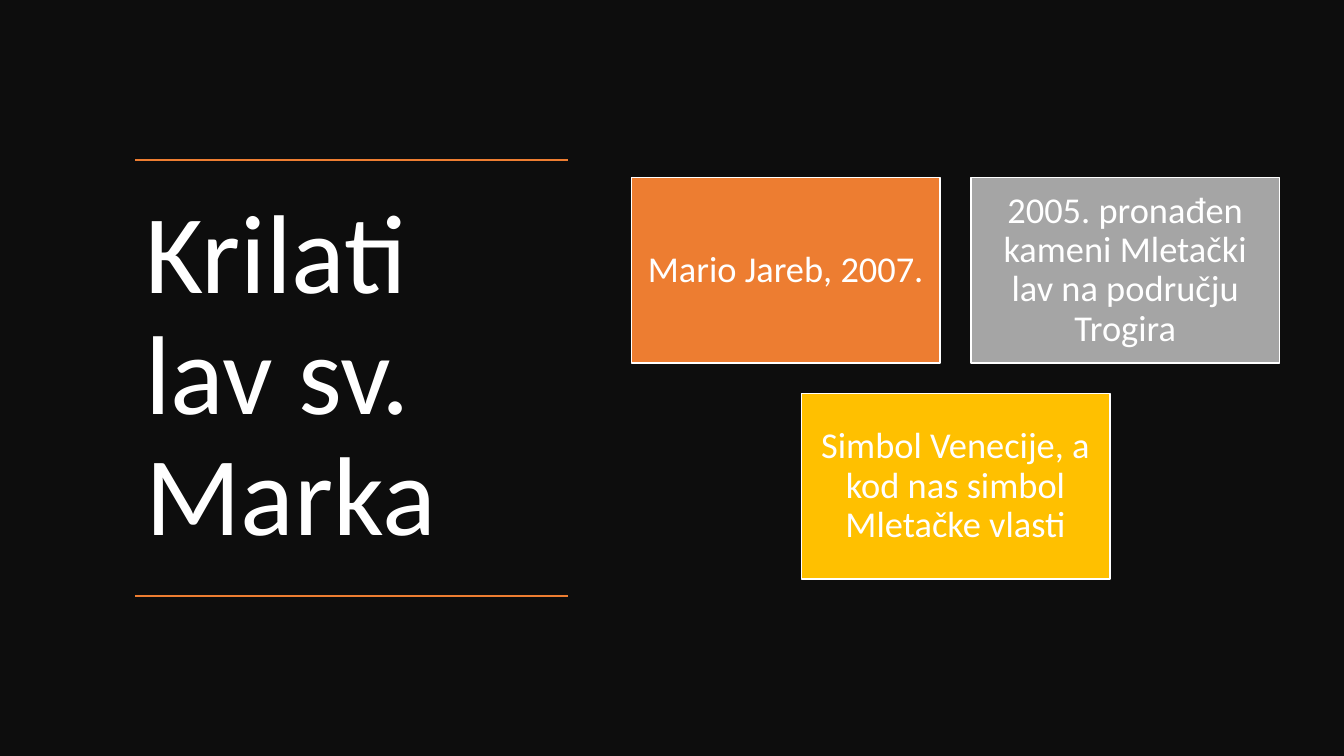
from lxml.etree import SubElement
from pptx import Presentation
from pptx.dml.color import RGBColor
from pptx.enum.shapes import MSO_CONNECTOR as Connector, MSO_SHAPE as Preset
from pptx.enum.text import MSO_ANCHOR as Anchor, MSO_AUTO_SIZE as AutoSize, PP_ALIGN as Align
from pptx.oxml.ns import qn
from pptx.util import Pt

COLORS = {
    "backdrop": "0D0D0D",
    "text": "FFFFFF",
    "orange": "ED7D31",
    "gray": "A5A5A5",
    "gold": "FFC000",
}
WIDTH, HEIGHT = 960, 540


class SlideBuilder:
    """Holds the style and the current slide."""

    font_name = "Calibri"

    def __init__(self, presentation):
        self.slide = presentation.slides.add_slide(presentation.slide_layouts[5])

    def color(self, name):
        return RGBColor.from_string(COLORS[name])

    def set_text(self, shape, text, size, align):
        frame = shape.text_frame
        frame.word_wrap = True
        frame.auto_size = AutoSize.NONE
        frame.vertical_anchor = Anchor.MIDDLE
        frame.text = text
        paragraph = frame.paragraphs[0]
        paragraph.alignment = align
        paragraph.line_spacing = 0.9
        paragraph.font.name = self.font_name
        paragraph.font.size = Pt(size)
        paragraph.font.color.rgb = self.color("text")
        return frame

    def title(self, text, left, top, width, height):
        shape = self.slide.shapes.title
        shape.left, shape.top = Pt(left), Pt(top)
        shape.width, shape.height = Pt(width), Pt(height)
        frame = self.set_text(shape, text, 80, Align.LEFT)
        frame.margin_right = Pt(36)

    def rectangle(self, left, top, width, height, fill):
        shape = self.slide.shapes.add_shape(
            Preset.RECTANGLE, Pt(left), Pt(top), Pt(width), Pt(height))
        shape.shadow.inherit = False
        shape.fill.solid()
        shape.fill.fore_color.rgb = self.color(fill)
        return shape

    def backdrop(self):
        shape = self.rectangle(0, 0, WIDTH, HEIGHT, "backdrop")
        shape.line.fill.background()
        self.slide.shapes.title.element.addprevious(shape.element)

    def rule(self, left, right, y):
        line = self.slide.shapes.add_connector(
            Connector.STRAIGHT, Pt(left), Pt(y), Pt(right), Pt(y))
        line.line.color.rgb = self.color("orange")
        line.line.width = Pt(1)
        SubElement(line.element.spPr, qn("a:effectLst"))

    def card(self, text, left, top, width, height, fill):
        shape = self.rectangle(left, top, width, height, fill)
        shape.line.color.rgb = self.color("text")
        shape.line.width = Pt(1)
        frame = self.set_text(shape, text, 26, Align.CENTER)
        frame.margin_left = frame.margin_right = Pt(7.8)
        frame.margin_top = frame.margin_bottom = Pt(7.8)


def main():
    presentation = Presentation()
    presentation.slide_width, presentation.slide_height = Pt(WIDTH), Pt(HEIGHT)
    builder = SlideBuilder(presentation)
    builder.backdrop()

    # Title between two rules
    left, top, width, height = 96.5, 114.2, 309.5, 311.6
    builder.title("Krilati lav sv. Marka", left, top, width, height)
    for y in (top, top + height):
        builder.rule(left, left + width, y)

    # Cards: two above, one centred below
    card_left, card_top = 451.2, 126.9
    card_width, card_height, gap = 220.4, 132.3, 22
    cards = [
        ("Mario Jareb, 2007.", 0, 0, "orange"),
        ("2005. pronađen kameni Mletački lav na području Trogira", 1, 0, "gray"),
        ("Simbol Venecije, a kod nas simbol Mletačke vlasti", 0.5, 1, "gold"),
    ]
    for text, column, row, fill in cards:
        builder.card(text, card_left + column * (card_width + gap),
                     card_top + row * (card_height + gap),
                     card_width, card_height, fill)

    presentation.save("out.pptx")


if __name__ == "__main__":
    main()
